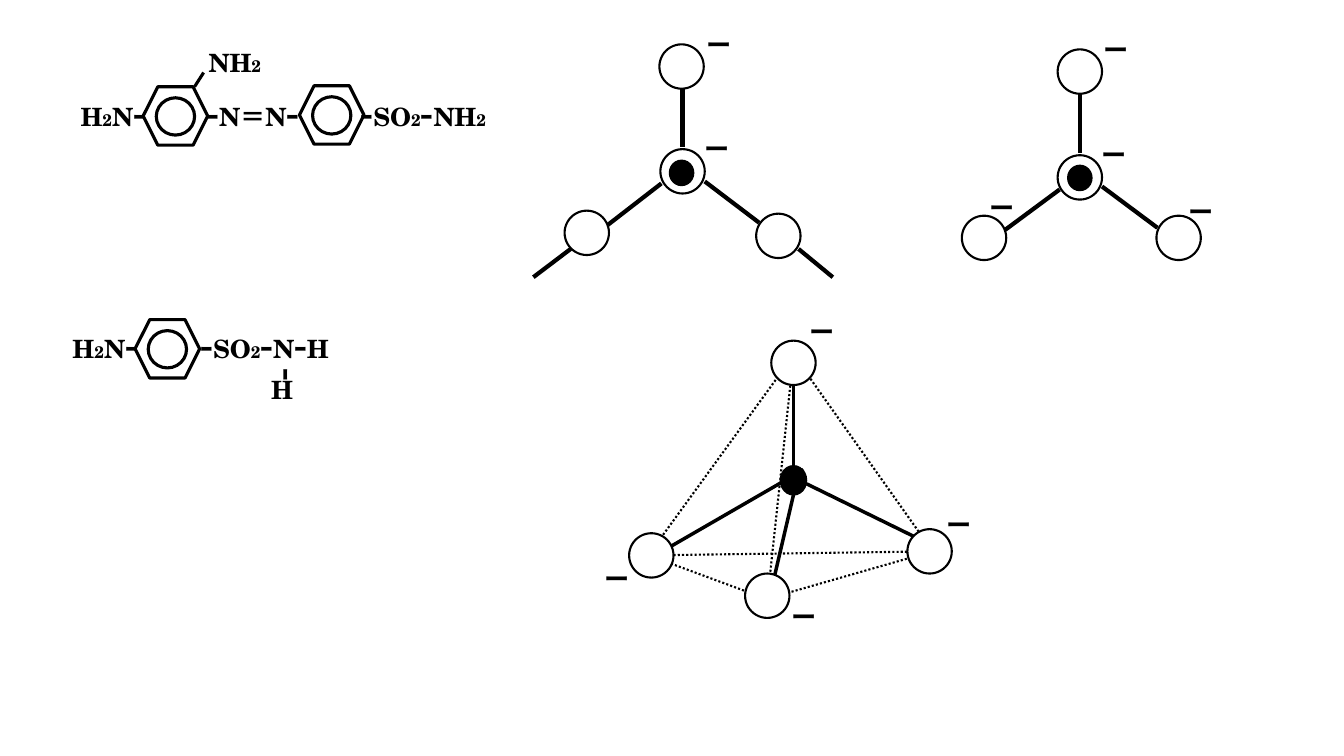
import dataclasses
import itertools

import lxml.etree
import pptx
import pptx.dml.color
import pptx.enum.dml
import pptx.enum.shapes
import pptx.enum.text
import pptx.oxml.ns
import pptx.util

PX = 9144
ATOM = 44
SHAPE = pptx.enum.shapes.MSO_SHAPE


@dataclasses.dataclass(frozen=True)
class Theme:
    ink: pptx.dml.color.RGBColor = pptx.dml.color.RGBColor(0, 0, 0)
    paper: pptx.dml.color.RGBColor = pptx.dml.color.RGBColor(255, 255, 255)
    font: str = "TeX Gyre Schola"
    size: int = 18
    subscript: int = 12
    nucleus_line: float = 1
    atom_line: float = 1.5
    ring_line: float = 2.25
    spoke_line: float = 2.5
    bond_line: float = 3


THEME = Theme()


def px(*lengths):
    return [pptx.util.Emu(n * PX) for n in lengths]


def set_line(line, width, dotted=False):
    line.color.rgb = THEME.ink
    line.width = pptx.util.Pt(width)
    if dotted:
        line.dash_style = pptx.enum.dml.MSO_LINE.ROUND_DOT


def add_outline(shapes, kind, box, width, fill=None, rotation=0, dotted=False):
    sp = shapes.add_shape(kind, *px(*box))
    sp.shadow.inherit = False
    sp.rotation = rotation
    if fill is None:
        sp.fill.background()
    else:
        sp.fill.solid()
        sp.fill.fore_color.rgb = fill
    set_line(sp.line, width, dotted)
    return sp


def add_line(shapes, ends, width, dotted=False):
    straight = pptx.enum.shapes.MSO_CONNECTOR.STRAIGHT
    line = shapes.add_connector(straight, *px(*ends))
    set_line(line.line, width, dotted)
    lxml.etree.SubElement(line._element.spPr, pptx.oxml.ns.qn("a:effectLst"))


def add_label(shapes, text, left, top, width, height=40, vertical=False):
    tf = shapes.add_textbox(*px(left, top, width, height)).text_frame
    tf.word_wrap = True
    tf.auto_size = pptx.enum.text.MSO_AUTO_SIZE.SHAPE_TO_FIT_TEXT
    if vertical:
        tf._txBody.bodyPr.set("vert", "eaVert")
    p = tf.paragraphs[0]
    for is_digit, letters in itertools.groupby(text, str.isdigit):
        r = p.add_run()
        r.text = "".join(letters)
        r.font.size = pptx.util.Pt(THEME.subscript if is_digit else THEME.size)
        r.font.bold = True
        r.font.color.rgb = THEME.ink
        r.font.name = THEME.font
        ea = lxml.etree.SubElement(r._r.rPr, pptx.oxml.ns.qn("a:ea"))
        ea.set("typeface", THEME.font)


def add_ring(shapes, left, top):
    add_outline(shapes, SHAPE.HEXAGON, (left, top, 64, 58), THEME.ring_line, rotation=180)
    add_outline(shapes, SHAPE.OVAL, (left + 13, top + 11, 38, 37), THEME.ring_line, rotation=180)


def add_atoms(shapes, corners):
    for left, top in corners:
        add_outline(shapes, SHAPE.OVAL, (left, top, ATOM, ATOM), THEME.atom_line, THEME.paper)


def add_nucleus(shapes, box):
    add_outline(shapes, SHAPE.OVAL, box, THEME.nucleus_line, THEME.ink)


def add_charges(shapes, corners):
    for left, top in corners:
        add_label(shapes, "ー", left, top, 63)


def add_azo_compound(shapes):
    add_ring(shapes, 142, 86)
    add_label(shapes, "H2Nｰ", 70, 96, 85)
    add_label(shapes, "ｰN＝Nｰ", 195, 96, 121)
    add_line(shapes, (193, 86, 202, 72), THEME.ring_line)
    add_label(shapes, "NH2", 197, 42, 82)
    add_ring(shapes, 297, 85)
    add_label(shapes, "ｰSO2ｰNH2", 348, 96, 158)


def add_sulfonamide(shapes):
    add_ring(shapes, 134, 317)
    add_label(shapes, "H2Nｰ", 62, 326, 85)
    add_label(shapes, "ｰSO2ｰNｰH", 189, 326, 158)
    add_label(shapes, "ｰ", 254, 356, 50, 29, vertical=True)
    add_label(shapes, "H", 259, 366, 50)


def add_tetrahedron(shapes):
    face = add_outline(shapes, SHAPE.ISOSCELES_TRIANGLE, (680, 344, 126, 236),
                       THEME.atom_line, rotation=20.3, dotted=True)
    face.adjustments[0] = 0.527
    right_corner = (925, 547)
    for corner in ((787, 352), (761, 594), (643, 551)):
        add_line(shapes, corner + right_corner, THEME.atom_line, dotted=True)
    add_nucleus(shapes, (774, 462, 26, 29))
    for spoke in ((787, 377, 787, 470), (662, 544, 797, 466),
                  (787, 491, 766, 581), (800, 480, 906, 532)):
        add_line(shapes, spoke, THEME.spoke_line)
    add_atoms(shapes, ((765, 338), (739, 569), (900, 525), (624, 529)))
    add_charges(shapes, ((793, 309), (929, 500), (775, 592), (590, 554)))


def add_trigonal(shapes, atoms, nucleus, bonds, charges):
    add_atoms(shapes, atoms)
    add_nucleus(shapes, nucleus + (24, 25))
    for bond in bonds:
        add_line(shapes, bond, THEME.bond_line)
    add_charges(shapes, charges)


def main():
    prs = pptx.Presentation()
    prs.slide_width, prs.slide_height = px(1333, 750)
    s = prs.slides.add_slide(prs.slide_layouts[6])

    for build in (add_azo_compound, add_sulfonamide, add_tetrahedron):
        build(s.shapes.add_group_shape().shapes)

    add_trigonal(
        s.shapes.add_group_shape().shapes,
        atoms=((1049, 49), (1147, 214), (954, 214), (1049, 154)),
        nucleus=(1059, 164),
        bonds=((1071, 93, 1071, 152), (997, 228, 1051, 188), (1093, 185, 1148, 226)),
        charges=((972, 186), (1083, 133), (1169, 190), (1085, 29)),
    )
    add_trigonal(
        s.shapes.add_group_shape().shapes,
        atoms=((654, 44), (750, 212), (560, 209), (655, 148)),
        nucleus=(664, 159),
        bonds=((677, 88, 677, 146), (603, 223, 656, 182), (699, 180, 753, 221)),
        charges=((689, 127), (691, 24)),
    )
    for chain_end in ((529, 275, 566, 247), (792, 247, 826, 275)):
        add_line(s.shapes, chain_end, THEME.bond_line)

    prs.save("out.pptx")


if __name__ == "__main__":
    main()
